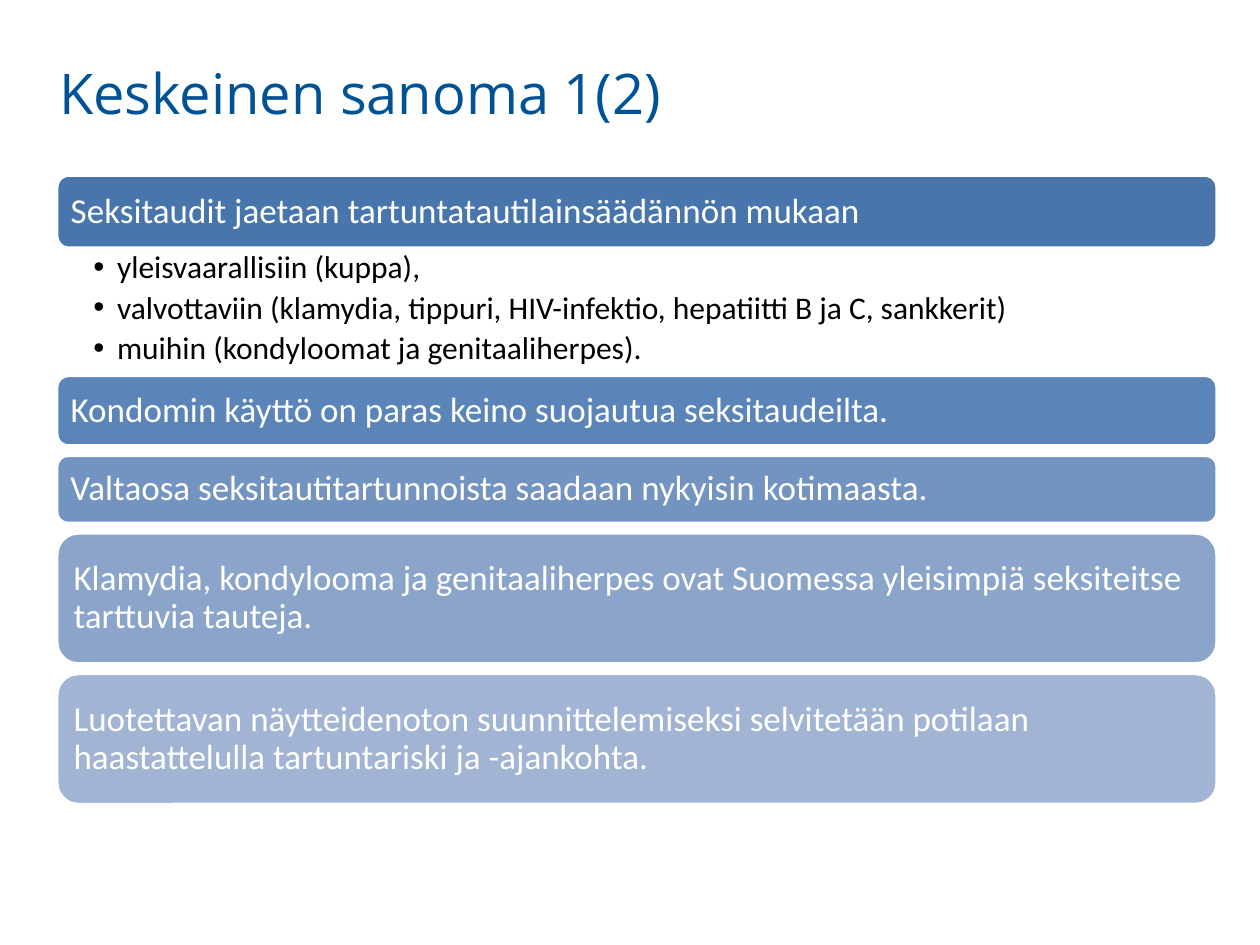
from dataclasses import dataclass

from pptx import Presentation
from pptx.dml.color import RGBColor
from pptx.enum import shapes, text
from pptx.oxml import ns, xmlchemy as xc
from pptx.util import Pt


@dataclass(frozen=True)
class Theme:
    title_font: str = "Open Sans"
    body_font: str = "Calibri"
    title_size: float = 32
    bar_size: float = 20
    list_size: float = 18
    title: str = "005296"
    text: str = "000000"
    white: str = "FFFFFF"
    bars: tuple = ("4875AC", "5B84B9", "7393C1", "8BA4CA", "A2B4D4")


THEME = Theme()
LEFT, TOP, WIDTH, GAP = 32.4, 100.1, 663.1, 5.4
LIST_HEIGHT = 72.7

# Bar text and bar height, from top to bottom
MESSAGES = [
    ("Seksitaudit jaetaan tartuntatautilainsäädännön mukaan", 41.75),
    ("Kondomin käyttö on paras keino suojautua seksitaudeilta.", 40.3),
    ("Valtaosa seksitautitartunnoista saadaan nykyisin kotimaasta.", 38.9),
    ("Klamydia, kondylooma ja genitaaliherpes ovat Suomessa yleisimpiä "
     "seksiteitse tarttuvia tauteja.", 74.9),
    ("Luotettavan näytteidenoton suunnittelemiseksi selvitetään potilaan "
     "haastattelulla tartuntariski ja -ajankohta.", 74.9),
]
DISEASE_GROUPS = [
    "yleisvaarallisiin (kuppa),",
    "valvottaviin (klamydia, tippuri, HIV-infektio, hepatiitti B ja C, sankkerit)",
    "muihin (kondyloomat ja genitaaliherpes).",
]


def apply(target, formats):
    for name, value in formats.items():
        setattr(target, name, value)


def place(sp, left, top, width, height):
    apply(sp, dict(left=Pt(left), top=Pt(top), width=Pt(width), height=Pt(height)))


def format_frame(tf, anchor, left, top, right, bottom):
    apply(tf, dict(word_wrap=True, auto_size=text.MSO_AUTO_SIZE.NONE,
                   vertical_anchor=anchor,
                   margin_left=Pt(left), margin_top=Pt(top),
                   margin_right=Pt(right), margin_bottom=Pt(bottom)))


def write(p, words, font, size, color, spacing=1.0, after=0):
    apply(p, dict(alignment=text.PP_ALIGN.LEFT, line_spacing=spacing,
                  space_before=Pt(0), space_after=Pt(after)))
    r = p.add_run()
    r.text = words
    apply(r.font, dict(name=font, size=Pt(size)))
    r.font.color.rgb = RGBColor.from_string(color)


def add_bullet(p, indent):
    pPr = p._p.get_or_add_pPr()
    pPr.set("marL", str(Pt(indent)))
    pPr.set("indent", str(-Pt(indent)))
    for tag, attr, value in (("a:buFont", "typeface", "Arial"), ("a:buChar", "char", "•")):
        pPr.append(xc.OxmlElement(tag))
        pPr.find(ns.qn(tag)).set(attr, value)


def set_title(s, words):
    sp = s.shapes.title
    place(sp, 26.6, 31.7, 649.4, 90.7)
    format_frame(sp.text_frame, text.MSO_ANCHOR.TOP, 7.2, 1.5, 7.2, 1.5)
    write(sp.text_frame.paragraphs[0], words, THEME.title_font,
          THEME.title_size, THEME.title)


def set_list(s, items, top):
    sp = s.placeholders[1]
    place(sp, LEFT, top, WIDTH, LIST_HEIGHT)
    tf = sp.text_frame
    format_frame(tf, text.MSO_ANCHOR.TOP, 21, 2, 10, 2)
    for i, item in enumerate(items):
        p = tf.add_paragraph() if i else tf.paragraphs[0]
        p.level = 1
        add_bullet(p, 13.5)
        write(p, item, THEME.body_font, THEME.list_size, THEME.text, 0.9, 3.5)


def add_bar(s, words, top, height, fill):
    sp = s.shapes.add_shape(shapes.MSO_SHAPE.ROUNDED_RECTANGLE,
                            Pt(LEFT), Pt(top), Pt(WIDTH), Pt(height))
    sp.shadow.inherit = False
    sp.fill.solid()
    sp.fill.fore_color.rgb = RGBColor.from_string(fill)
    sp.line.color.rgb = RGBColor.from_string(THEME.white)
    sp.line.width = Pt(2)
    format_frame(sp.text_frame, text.MSO_ANCHOR.MIDDLE, 6, 6, 6, 6)
    write(sp.text_frame.paragraphs[0], words, THEME.body_font,
          THEME.bar_size, THEME.white, 0.9)


def main():
    prs = Presentation()
    apply(prs, dict(slide_width=Pt(720), slide_height=Pt(540)))
    s = prs.slides.add_slide(prs.slide_layouts[1])
    set_title(s, "Keskeinen sanoma 1(2)")

    # Stack of message bars, with the list under the first one
    top = TOP
    for i, ((words, height), fill) in enumerate(zip(MESSAGES, THEME.bars)):
        add_bar(s, words, top, height, fill)
        top += height
        if i == 0:
            set_list(s, DISEASE_GROUPS, top)
            top += LIST_HEIGHT
        else:
            top += GAP

    prs.save("out.pptx")


if __name__ == "__main__":
    main()
